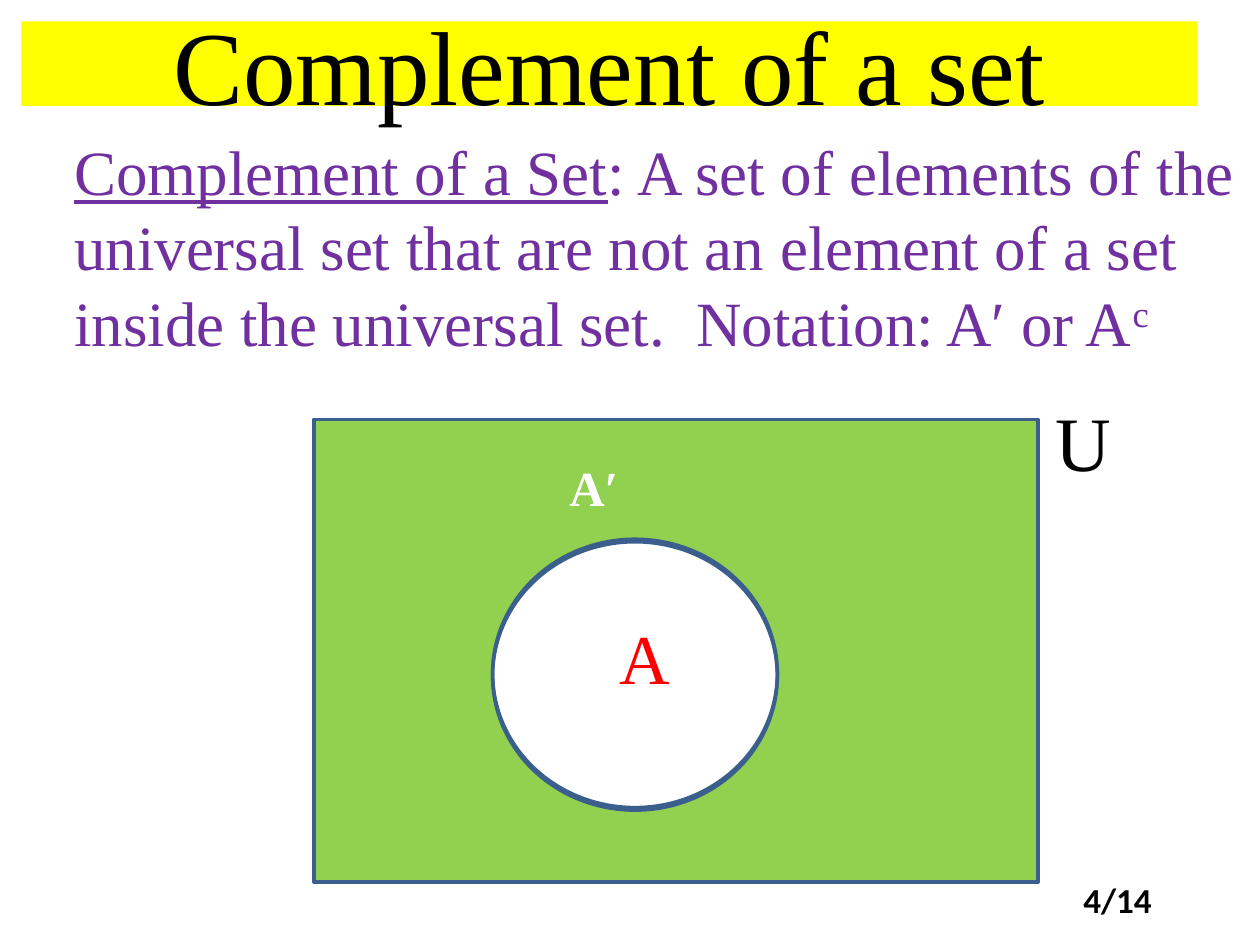
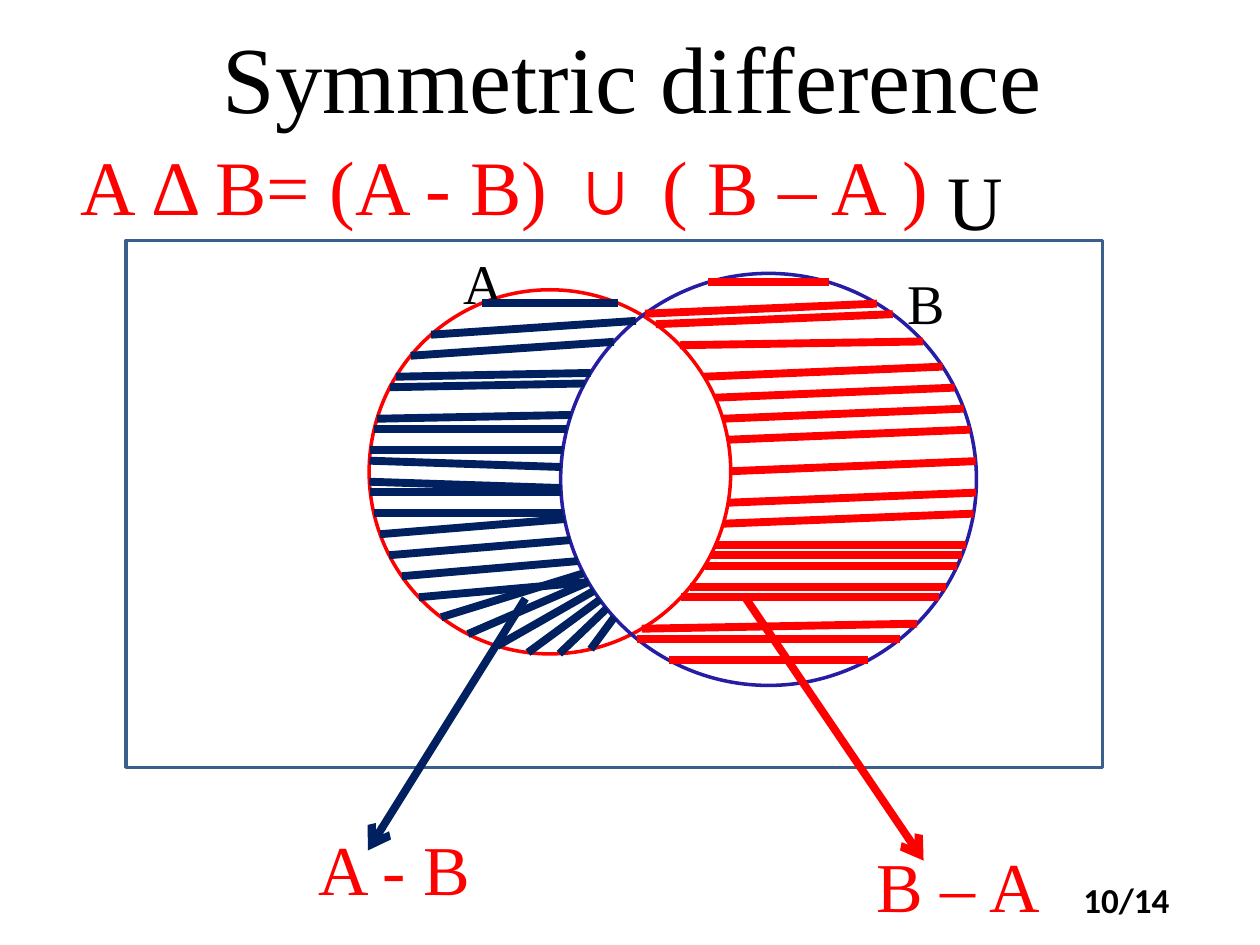
from dataclasses import dataclass
from math import cos, radians, sin, sqrt
from typing import Iterable, Optional

from lxml import etree
from pptx import Presentation
from pptx.dml.color import RGBColor
from pptx.enum.shapes import MSO_CONNECTOR as Conn, MSO_SHAPE as Kind
from pptx.enum.text import MSO_ANCHOR as Anchor, MSO_AUTO_SIZE as Fit, PP_ALIGN as Align
from pptx.oxml.ns import qn
from pptx.util import Inches, Pt

SERIF = "Times New Roman"
SANS = "Calibri"
BLACK, WHITE, RED = "000000", "FFFFFF", "FF0000"
NAVY, STEEL, BLUE = "002060", "3A5F8C", "271DA5"
GREEN, YELLOW, PURPLE = "92D050", "FFFF00", "7030A0"
PAGES = 14

Box = tuple[float, float, float, float]
Line = tuple[float, float, float, float]
Point = tuple[float, float]


@dataclass
class Run:
    text: str
    under: bool = False
    raised: bool = False


@dataclass
class Label:
    box: Box
    runs: list[Run]
    size: int
    color: str = BLACK
    font: str = SERIF
    bold: bool = False
    indent: float = 0


@dataclass
class Form:
    kind: Kind
    box: Box
    line: Optional[str] = STEEL
    fill: Optional[str] = None


@dataclass
class Band:
    """Neighbouring hatch rows whose strokes climb equally to the right."""
    rows: Iterable[int]
    rise: float = 0


@dataclass
class Oval:
    box: Box
    color: str

    def frame(self) -> Line:
        """Give the centre and the two radii."""
        left, top, width, height = self.box
        return left + width / 2, top + height / 2, width / 2, height / 2

    def edges(self, y: float) -> Point:
        """Give the left and right x of the outline at height y."""
        mid, level, wide, tall = self.frame()
        half = wide * sqrt(max(0, 1 - ((y - level) / tall) ** 2))
        return mid - half, mid + half

    def point(self, angle: float) -> Point:
        """Give the outline point at an angle, clockwise from the right."""
        mid, level, wide, tall = self.frame()
        turn = radians(angle)
        return mid + wide * cos(turn), level + tall * sin(turn)


def rgb(code: str) -> RGBColor:
    return RGBColor.from_string(code)


def draw(slide, form: Form):
    shape = slide.shapes.add_shape(form.kind, *map(Inches, form.box))
    shape.shadow.inherit = False
    if form.fill:
        shape.fill.solid()
        shape.fill.fore_color.rgb = rgb(form.fill)
    else:
        shape.fill.background()
    if form.line:
        shape.line.color.rgb = rgb(form.line)
        shape.line.width = Pt(2)
    else:
        shape.line.fill.background()
    return shape


def write(frame, label: Label) -> None:
    frame.word_wrap = True
    para = frame.paragraphs[0]
    if label.indent:
        props = para._p.get_or_add_pPr()
        props.set("marL", str(Inches(label.indent)))
        props.set("indent", "0")
    for item in label.runs:
        run = para.add_run()
        run.text = item.text
        font = run.font
        font.name, font.size, font.bold = label.font, Pt(label.size), label.bold
        font.color.rgb = rgb(label.color)
        if item.under:
            font.underline = True
        if item.raised:
            run._r.get_or_add_rPr().set("baseline", "30000")


def place(slide, label: Label) -> None:
    frame = slide.shapes.add_textbox(*map(Inches, label.box)).text_frame
    write(frame, label)
    frame.auto_size = Fit.SHAPE_TO_FIT_TEXT


def stroke(shapes, ends: Line, color: str, arrow: bool = False) -> None:
    line = shapes.add_connector(Conn.STRAIGHT, *map(Inches, ends))
    line.line.color.rgb = rgb(color)
    line.line.width = Pt(4.5)
    if arrow:
        etree.SubElement(line.line._get_or_add_ln(), qn("a:tailEnd"), type="arrow")
    etree.SubElement(line._element.spPr, qn("a:effectLst"))


def hatch(slide, lines: list[Line], color: str) -> None:
    """Shade one region with a group of strokes."""
    group = slide.shapes.add_group_shape()
    for ends in lines:
        stroke(group.shapes, ends, color)


def number(slide, page: int) -> None:
    place(slide, Label((8.5, 6.92, 1.08, 0.44), [Run(f"{page}/{PAGES}")], 20,
                       font=SANS, bold=True))


# Hatch rows are counted downwards from TOP, one twelfth of an inch apart.
TOP, STEP = 2.24, 1 / 12
SET_A = Oval((2.93, 2.3, 2.87, 2.89), RED)
SET_B = Oval((4.45, 2.17, 3.3, 3.27), BLUE)
ONLY_A = [
    Band([2]), Band([5, 7], 0.11), Band([9, 10, 13], 0.03), Band([14, 16]),
    Band([17, 19], -0.05), Band([20, 22]), Band(range(24, 31, 2), 0.12),
]
ONLY_B = [
    Band([0]), Band([3, 4], 0.08), Band([6], 0.03),
    Band([*range(9, 16, 2), 18, 21, 23], 0.08),
    Band([25, 26, 27, 29, 30]), Band([33], 0.04), Band([34, 36]),
]


def heights(bands: list[Band]) -> list[Point]:
    """Give the start and end height of every stroke."""
    starts = [(TOP + row * STEP, band.rise) for band in bands for row in band.rows]
    return [(y, y - rise) for y, rise in starts]


def less_b() -> list[Line]:
    """Run from the left side of A to the nearer of B's left and A's right."""
    return [
        (SET_A.edges(y)[0], y, min(SET_A.edges(end)[1], SET_B.edges(end)[0]), end)
        for y, end in heights(ONLY_A)
    ]


def less_a() -> list[Line]:
    """Run from the further of A's right and B's left to the right side of B."""
    return [
        (max(SET_A.edges(y)[1], SET_B.edges(y)[0]), y, SET_B.edges(end)[1], end)
        for y, end in heights(ONLY_B)
    ]


def fan(count: int = 6) -> list[Line]:
    """Spread strokes from the bottom arc of A to the left side of B."""
    lines = []
    for i in range(count):
        end = 4.55 + 0.07 * i
        lines.append((*SET_A.point(127 - 10 * i), SET_B.edges(end)[0], end))
    return lines


def inverse(slide) -> None:
    """Slide on the complement of a set."""
    draw(slide, Form(Kind.RECTANGLE, (2.49, 3.33, 5.75, 3.67), fill=GREEN))
    for top, fill in ((4.3, WHITE), (4.28, None)):
        draw(slide, Form(Kind.OVAL, (3.91, top, 2.26, 2.13), fill=fill))

    band = (0.17, 0.17, 9.33, 0.67)
    frame = draw(slide, Form(Kind.RECTANGLE, band, None, YELLOW)).text_frame
    write(frame, Label(band, [Run("Complement of a set")], 60))
    frame.vertical_anchor = Anchor.MIDDLE
    frame.paragraphs[0].alignment = Align.CENTER

    place(slide, Label((-0.01, 1, 10, 1.92), [
        Run("Complement of a Set", under=True),
        Run(": A set of elements of the universal set that are not an element "
            "of a set inside the universal set.  Notation: A′ or A"),
        Run("c", raised=True),
    ], 36, PURPLE, indent=0.5))
    place(slide, Label((8.28, 3.08, 1.06, 0.84), [Run("U")], 44))
    place(slide, Label((4.82, 4.83, 0.6, 0.77), [Run("A")], 40, RED))
    place(slide, Label((4.42, 3.58, 1.31, 0.57), [Run("A′")], 28, WHITE, bold=True))
    number(slide, 4)


def delta(slide) -> None:
    """Slide on the symmetric difference of two sets."""
    place(slide, Label((1.67, 0.1, 7.33, 1.08), [Run("Symmetric difference")], 54))
    place(slide, Label((0.04, 1.05, 7.63, 0.84), [Run("A Δ B= (A - B) ∪ ( B – A )")],
                       44, RED, indent=0.5))
    draw(slide, Form(Kind.RECTANGLE, (1, 1.91, 7.75, 4.18)))
    place(slide, Label((7.42, 1.17, 0.32, 0.84), [Run("U")], 44))
    for oval in (SET_A, SET_B):
        draw(slide, Form(Kind.OVAL, oval.box, oval.color))
    for name, left, top in (("A", 3.58, 1.92), ("B", 7.1, 2.08)):
        place(slide, Label((left, top, 0.32, 0.64), [Run(name)], 32))

    hatch(slide, less_b() + fan(), NAVY)
    hatch(slide, less_a(), RED)
    for ends, color in (((4.17, 4.75, 2.92, 6.75), NAVY),
                        ((5.92, 4.75, 7.33, 6.83), RED)):
        stroke(slide.shapes, ends, color, arrow=True)
    for name, left, top, indent in (("A - B", 1.83, 6.5, 0.6),
                                    ("B – A", 6.08, 6.64, 0.78)):
        place(slide, Label((left, top, 2.68, 0.77), [Run(name)], 40, RED, indent=indent))
    number(slide, 10)


def main() -> None:
    deck = Presentation()
    deck.slide_width, deck.slide_height = Inches(10), Inches(7.5)
    for build in (inverse, delta):
        build(deck.slides.add_slide(deck.slide_layouts[6]))
    deck.save("out.pptx")


if __name__ == "__main__":
    main()
